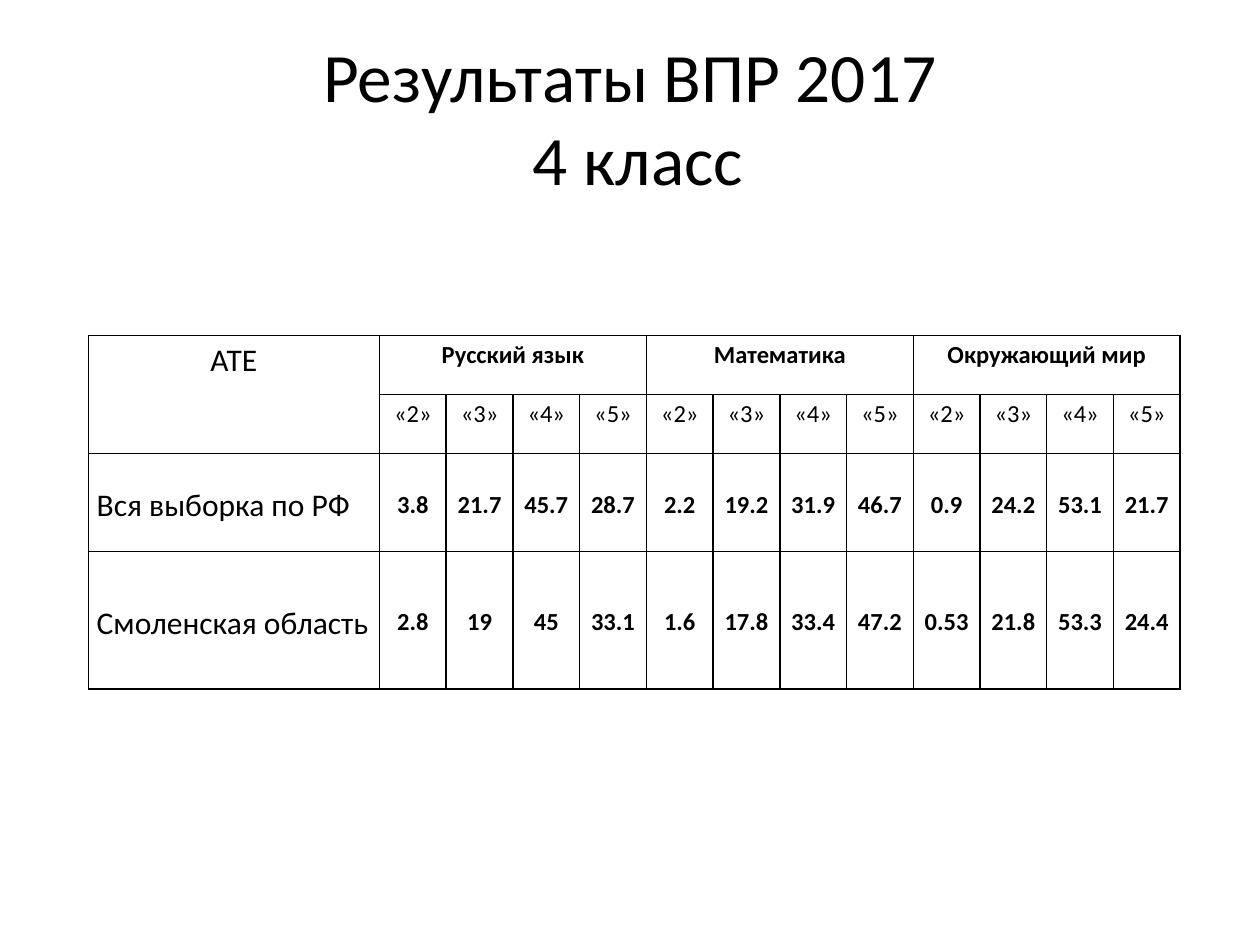
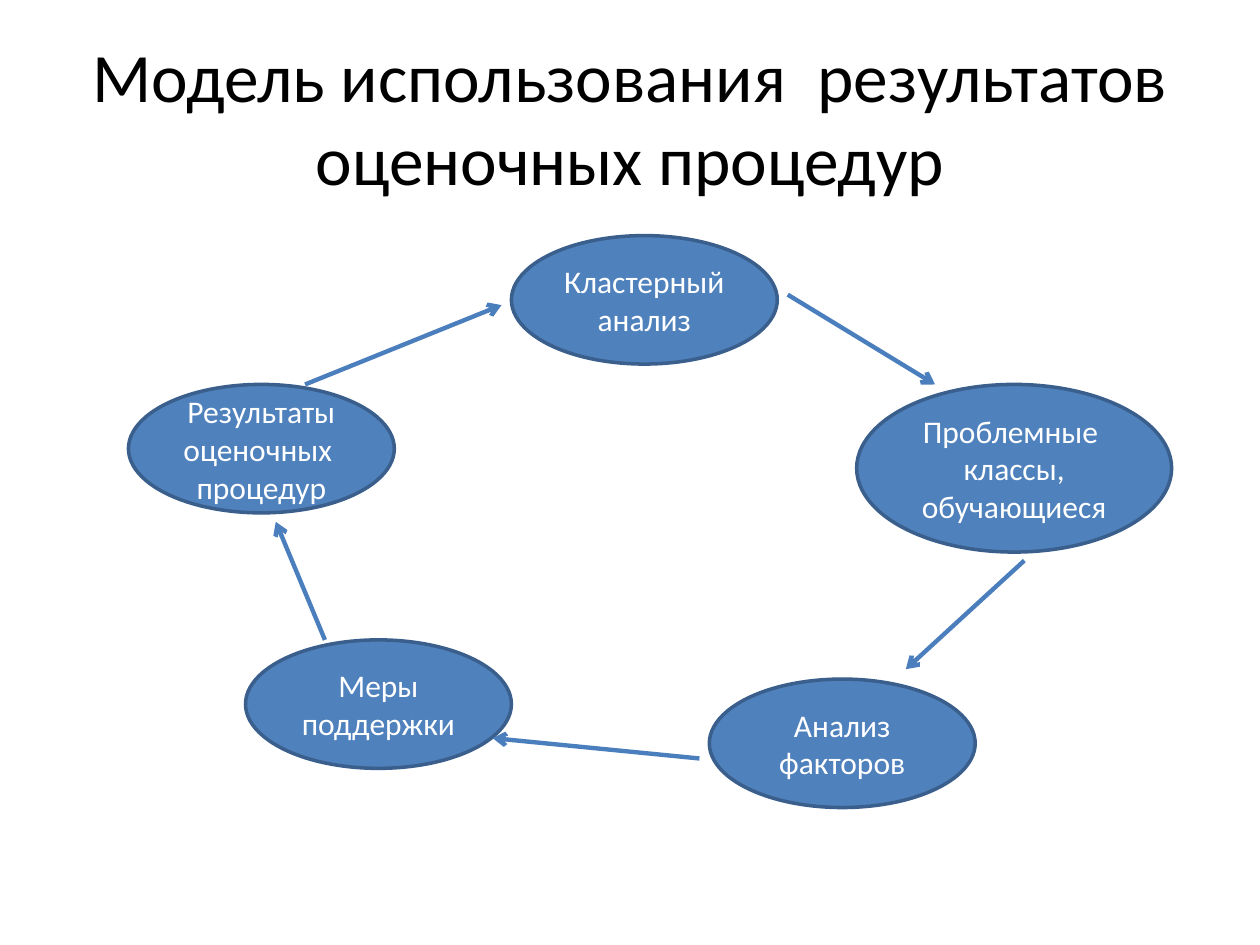
"""Builds two slides: a table of test results and a cycle of how results are used."""
from lxml import etree
from pptx import Presentation
from pptx.dml.color import RGBColor
from pptx.enum.shapes import MSO_CONNECTOR, MSO_SHAPE
from pptx.enum.text import MSO_ANCHOR, MSO_AUTO_SIZE, PP_ALIGN
from pptx.oxml.ns import qn
from pptx.util import Cm, Pt

LEFT, CENTER = PP_ALIGN.LEFT, PP_ALIGN.CENTER
TOP, MIDDLE = MSO_ANCHOR.TOP, MSO_ANCHOR.MIDDLE
NO_AUTOFIT = MSO_AUTO_SIZE.NONE
ELLIPSE, STRAIGHT = MSO_SHAPE.OVAL, MSO_CONNECTOR.STRAIGHT

BLACK = RGBColor(0x00, 0x00, 0x00)
WHITE = RGBColor(0xFF, 0xFF, 0xFF)
BLUE = RGBColor(0x4F, 0x81, 0xBD)
DARK_BLUE = RGBColor(0x3A, 0x5F, 0x8C)
ARROW_BLUE = RGBColor(0x4B, 0x7E, 0xBC)
FONT = "Calibri"

RESULTS_TITLE = "Результаты ВПР 2017\v 4 класс"
REGION_HEADING = "АТЕ"
SUBJECTS = ["Русский язык", "Математика", "Окружающий мир"]
GRADES = ["«2»", "«3»", "«4»", "«5»"]
RESULTS = [
    ("Вся выборка по РФ", ["3.8", "21.7", "45.7", "28.7", "2.2", "19.2",
                           "31.9", "46.7", "0.9", "24.2", "53.1", "21.7"]),
    ("Смоленская область", ["2.8", "19", "45", "33.1", "1.6", "17.8",
                            "33.4", "47.2", "0.53", "21.8", "53.3", "24.4"]),
]
TABLE_LEFT, TABLE_TOP, TABLE_WIDTH = 1.78, 6.76, 22.02
REGION_WIDTH = 5.87
ROW_HEIGHTS = [1.19, 1.19, 1.98, 2.77]

MODEL_TITLE = "Модель использования  результатов оценочных процедур"
STEP_SIZE = (5.36, 2.59)
LARGE_STEP_SIZE = (6.35, 3.38)
STEPS = [
    ("Результаты оценочных  процедур", (2.59, 7.75), STEP_SIZE),
    ("Меры поддержки", (4.95, 12.9), STEP_SIZE),
    ("Анализ факторов", (14.3, 13.69), STEP_SIZE),
    ("Проблемные  классы, обучающиеся", (17.27, 7.75), LARGE_STEP_SIZE),
    ("Кластерный анализ", (10.31, 4.75), STEP_SIZE),
]
ARROWS = [
    ((6.15, 7.75), (10.11, 6.15)),
    ((15.88, 5.94), (18.85, 7.75)),
    ((20.65, 11.3), (18.26, 13.49)),
    ((14.1, 15.29), (9.93, 14.88)),
    ((6.55, 12.9), (5.56, 10.52)),
]


def format_paragraph(paragraph, size, color=BLACK, bold=False, alignment=CENTER):
    paragraph.alignment = alignment
    font = paragraph.font
    font.name, font.size, font.bold = FONT, Pt(size), bold
    font.color.rgb = color


def add_titled_slide(presentation, title):
    slide = presentation.slides.add_slide(presentation.slide_layouts[5])
    shape = slide.shapes.title
    shape.left, shape.top, shape.width, shape.height = Cm(1.27), Cm(0.76), Cm(22.86), Cm(3.18)
    frame = shape.text_frame
    frame.text = title
    frame.auto_size = NO_AUTOFIT
    frame.vertical_anchor = MIDDLE
    format_paragraph(frame.paragraphs[0], 39.6)
    return slide


def style_cell(cell):
    cell.margin_left = cell.margin_right = Cm(0.17)
    cell.margin_top = cell.margin_bottom = 0
    properties = cell._tc.get_or_add_tcPr()
    for side in ("lnL", "lnR", "lnT", "lnB"):
        border = etree.SubElement(properties, qn(f"a:{side}"), w=str(Pt(1)))
        fill = etree.SubElement(border, qn("a:solidFill"))
        etree.SubElement(fill, qn("a:srgbClr"), val=str(BLACK))
    cell.fill.background()


def write_cell(cell, text, size, bold=False, alignment=CENTER, anchor=TOP):
    cell.text = text
    cell.vertical_anchor = anchor
    paragraph = cell.text_frame.paragraphs[0]
    format_paragraph(paragraph, size, bold=bold, alignment=alignment)
    paragraph.line_spacing = 1.15
    indents = paragraph._p.get_or_add_pPr()
    indents.set("marL", str(Cm(0.64)))
    indents.set("indent", str(-Cm(0.64)))


def add_results_table(slide):
    grade_count = len(SUBJECTS) * len(GRADES)
    table = slide.shapes.add_table(
        len(ROW_HEIGHTS), grade_count + 1, Cm(TABLE_LEFT), Cm(TABLE_TOP),
        Cm(TABLE_WIDTH), Cm(sum(ROW_HEIGHTS))).table
    table.first_row = table.horz_banding = False
    for row, height in zip(table.rows, ROW_HEIGHTS):
        row.height = Cm(height)
    for index, column in enumerate(table.columns):
        column.width = Cm((TABLE_WIDTH - REGION_WIDTH) / grade_count if index else REGION_WIDTH)
    for cell in table.iter_cells():
        style_cell(cell)

    table.cell(0, 0).merge(table.cell(1, 0))
    write_cell(table.cell(0, 0), REGION_HEADING, 18)
    for index, subject in enumerate(SUBJECTS):
        first = 1 + index * len(GRADES)
        table.cell(0, first).merge(table.cell(0, first + len(GRADES) - 1))
        write_cell(table.cell(0, first), subject, 14, bold=True)
        for offset, grade in enumerate(GRADES):
            write_cell(table.cell(1, first + offset), grade, 14)
    for row, (region, shares) in enumerate(RESULTS, 2):
        write_cell(table.cell(row, 0), region, 18, alignment=LEFT, anchor=MIDDLE)
        for column, share in enumerate(shares, 1):
            write_cell(table.cell(row, column), share, 14, bold=True, anchor=MIDDLE)


def add_step(slide, text, position, size):
    shape = slide.shapes.add_shape(ELLIPSE, *map(Cm, position + size))
    shape.shadow.inherit = False
    shape.fill.solid()
    shape.fill.fore_color.rgb = BLUE
    shape.line.color.rgb = DARK_BLUE
    shape.line.width = Pt(2)
    frame = shape.text_frame
    frame.text = text
    frame.word_wrap = True
    frame.vertical_anchor = MIDDLE
    format_paragraph(frame.paragraphs[0], 18, WHITE)


def add_arrow(slide, start, end):
    connector = slide.shapes.add_connector(STRAIGHT, *map(Cm, start + end))
    connector.line.color.rgb = ARROW_BLUE
    connector.line.width = Pt(2.5)
    etree.SubElement(connector.line._get_or_add_ln(), qn("a:tailEnd"), type="arrow")
    etree.SubElement(connector._element.spPr, qn("a:effectLst"))


def main():
    presentation = Presentation()
    presentation.slide_width, presentation.slide_height = Cm(25.4), Cm(19.05)
    add_results_table(add_titled_slide(presentation, RESULTS_TITLE))
    model_slide = add_titled_slide(presentation, MODEL_TITLE)
    for step in STEPS:
        add_step(model_slide, *step)
    for arrow in ARROWS:
        add_arrow(model_slide, *arrow)
    presentation.save("out.pptx")


if __name__ == "__main__":
    main()
